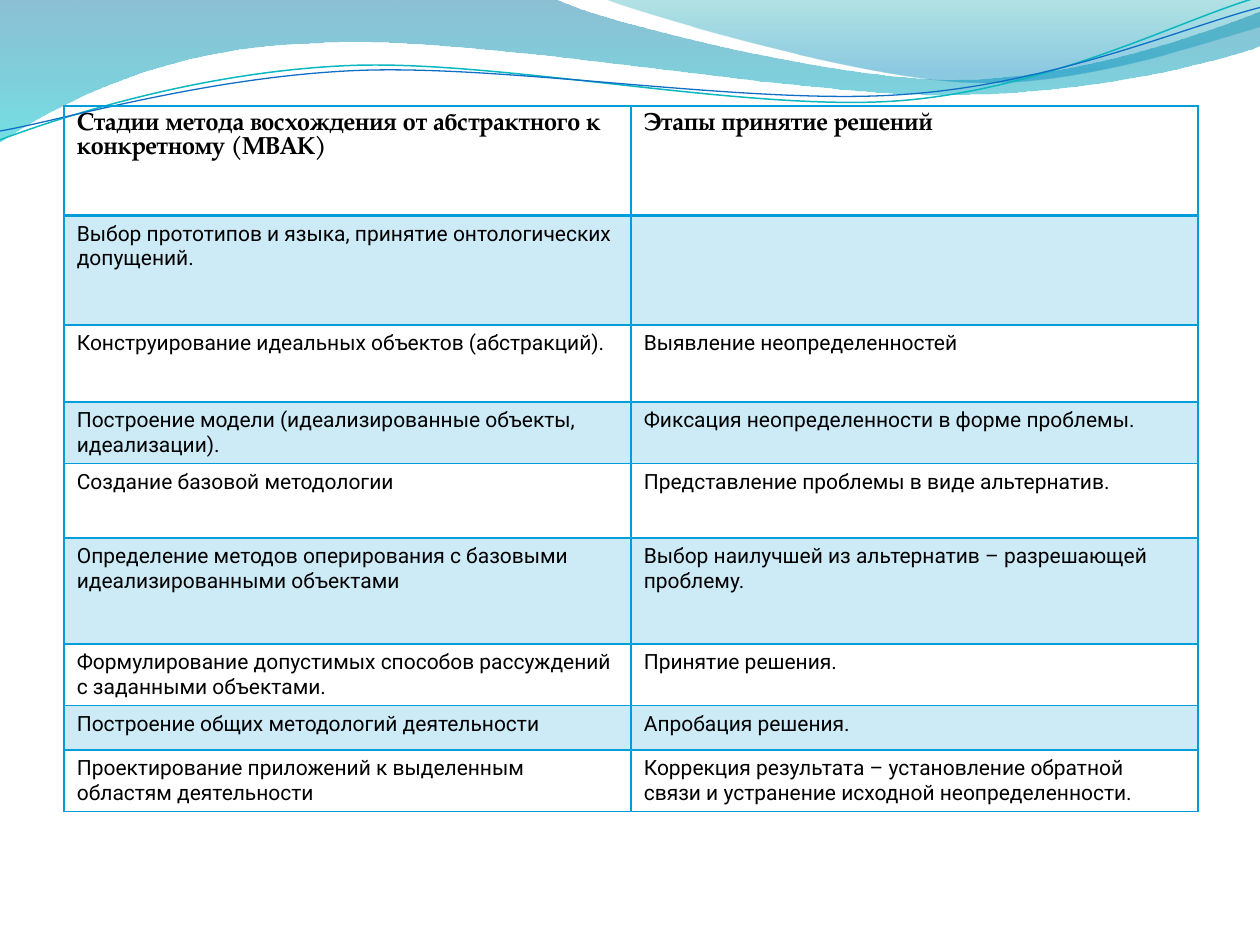
from dataclasses import dataclass
from math import cos, radians, sin
from typing import Optional

from lxml.etree import SubElement
from pptx import Presentation
from pptx.dml.color import RGBColor
from pptx.oxml.ns import qn
from pptx.oxml.xmlchemy import OxmlElement
from pptx.util import Inches, Pt

BLUE = "009DD9"
TILT = 2.7  # degrees, counter-clockwise turn of the thin lines
HEAD = {"name": "TeX Gyre Pagella", "size": Pt(14), "bold": True}
BODY = {"name": "Roboto", "size": Pt(12), "bold": False}


@dataclass
class Stop:
    pos: float
    color: str
    alpha: int


@dataclass
class Wave:
    start: tuple
    steps: list  # two numbers: straight line; six numbers: Bezier curve
    stops: Optional[list] = None
    line: Optional[tuple] = None  # colour, points
    pivot: tuple = (0, 0)  # centre of the turn


WAVES = [
    # Filled bands
    Wave((0, 0),
         [(4.4, -0.01), (4.76, 0.17, 6.64, 0.63, 7.58, 0.63),
          (8.53, 0.63, 9.58, 0.26, 10, 0.09), (10.01, 0.36),
          (9.83, 0.44, 8.7, 0.76, 7.46, 0.75),
          (6.22, 0.75, 3.82, 0.28, 2.57, 0.34),
          (1.29, 0.36, 0.46, 0.83, -0.01, 1.13), (0, 0)],
         stops=[Stop(0, "0074A1", 45), Stop(1, "00C6CF", 55)]),
    Wave((4.79, -0.01),
         [(5.09, 0.11, 6.82, 0.62, 7.69, 0.65),
          (8.56, 0.69, 9.61, 0.32, 10, 0.21), (10, 0), (4.79, -0.01)],
         stops=[Stop(0, "00A1A9", 30), Stop(0.8, "008BBF", 45)]),
    # Thin lines
    Wave((0, 1.11),
         [(0.48, 0.93, 1.58, 0.57, 2.77, 0.52),
          (3.95, 0.47, 5.93, 0.89, 7.13, 0.8),
          (8.33, 0.71, 9.38, 0.15, 9.98, -0.02)],
         line=("0AB8BF", 0.85), pivot=(4.99, 0.58)),
    Wave((0, 1.04),
         [(0.47, 0.96, 1.64, 0.61, 2.83, 0.56),
          (4.03, 0.51, 5.97, 0.84, 7.17, 0.75),
          (8.36, 0.67, 9.41, 0.21, 10, 0.06)],
         line=("0F6FC6", 0.75), pivot=(5, 0.59)),
]

# Row height, left text, right text
ROWS = [
    (0.87, "Стадии метода восхождения от абстрактного к конкретному (МВАК)",
     "Этапы принятие решений"),
    (0.87, "Выбор прототипов и языка, принятие онтологических допущений.", ""),
    (0.61, "Конструирование идеальных объектов (абстракций).",
     "Выявление неопределенностей"),
    (0.47, "Построение модели (идеализированные объекты, идеализации).",
     "Фиксация неопределенности в форме проблемы."),
    (0.59, "Создание базовой методологии",
     "Представление проблемы в виде альтернатив."),
    (0.84, "Определение методов оперирования с базовыми идеализированными объектами",
     "Выбор наилучшей из альтернатив – разрешающей проблему."),
    (0.35, "Формулирование допустимых способов рассуждений с заданными объектами.",
     "Принятие решения."),
    (0.35, "Построение общих методологий деятельности", "Апробация решения."),
    (0.35, "Проектирование приложений к выделенным областям деятельности",
     "Коррекция результата – установление обратной связи и устранение "
     "исходной неопределенности."),
]


def paint(color, code: str) -> None:
    color.rgb = RGBColor.from_string(code)


def fade(node, alpha: int) -> None:
    """Set the opacity, in percent, of a colour element."""
    SubElement(node, qn("a:alpha"), val=str(alpha * 1000))


def level(point: tuple, wave: Wave) -> tuple:
    """Give a point in EMU as it lies before the line is turned."""
    x, y = point
    if wave.line:
        turn = radians(TILT)
        mid, top = wave.pivot
        dx, dy = x - mid, y - top
        x = mid + dx * cos(turn) - dy * sin(turn)
        y = top + dx * sin(turn) + dy * cos(turn)
    return Inches(x), Inches(y)


def bend(shape, steps: list) -> None:
    """Join each three segments that stand for a curve into one Bezier."""
    nodes = iter(list(shape._element.spPr.iter(qn("a:lnTo"))))
    for step in steps:
        group = [next(nodes) for _ in range(len(step) // 2)]
        if len(group) == 3:
            curve = OxmlElement("a:cubicBezTo")
            group[0].addprevious(curve)
            for node in group:
                curve.append(node[0])
                node.getparent().remove(node)


def draw_wave(slide, wave: Wave) -> None:
    points = [step[i:i + 2] for step in wave.steps for i in range(0, len(step), 2)]
    pen = slide.shapes.build_freeform(*level(wave.start, wave), scale=1.0)
    pen.add_line_segments([level(p, wave) for p in points], close=wave.line is None)
    shape = pen.convert_to_shape()
    bend(shape, wave.steps)
    shape.shadow.inherit = False
    if wave.line:
        code, width = wave.line
        shape.rotation = 360 - TILT
        shape.fill.background()
        paint(shape.line.color, code)
        shape.line.width = Pt(width)
        return
    shape.line.fill.background()
    shape.fill.gradient()
    shape.fill.gradient_angle = 270
    for mark, stop in zip(shape.fill.gradient_stops, wave.stops):
        mark.position = stop.pos
        paint(mark.color, stop.color)
    nodes = shape._element.spPr.iter(qn("a:srgbClr"))
    for node, stop in zip(list(nodes), wave.stops):
        fade(node, stop.alpha)


def set_edges(cell, base: float) -> None:
    """Add borders; they must come before the fill in the cell XML."""
    props = cell._tc.get_or_add_tcPr()
    widths = {"lnL": 1, "lnR": 1, "lnT": 1, "lnB": base}
    for tag, width in widths.items():
        edge = SubElement(props, qn("a:" + tag), w=str(Pt(width)))
        fill = SubElement(edge, qn("a:solidFill"))
        SubElement(fill, qn("a:srgbClr"), val=BLUE)


def fill_cell(cell, text: str, row: int) -> None:
    set_edges(cell, 2 if row == 0 else 1)
    if row % 2:
        cell.fill.solid()
        paint(cell.fill.fore_color, BLUE)
        for node in cell._tc.tcPr.findall(qn("a:solidFill") + "/" + qn("a:srgbClr")):
            fade(node, 20)
    else:
        cell.fill.background()
    para = cell.text_frame.paragraphs[0]
    if row == 0:
        para.line_spacing = Pt(14)
    if not text:
        para.font.size = BODY["size"]
        return
    run = para.add_run()
    run.text = text
    for key, value in (BODY if row else HEAD).items():
        setattr(run.font, key, value)
    paint(run.font.color, "000000")


def draw_table(slide) -> None:
    frame = slide.shapes.add_table(len(ROWS), 2, Inches(0.51), Inches(0.84),
                                   Inches(9), Inches(5.82))
    table = frame.table
    table.first_row = table.horz_banding = False
    for r, (height, *texts) in enumerate(ROWS):
        table.rows[r].height = Inches(height)
        for c, text in enumerate(texts):
            fill_cell(table.cell(r, c), text, r)
    frame.height = Inches(5.82)


def main() -> None:
    deck = Presentation()
    deck.slide_width, deck.slide_height = Inches(10), Inches(7.5)
    slide = deck.slides.add_slide(deck.slide_layouts[6])
    for wave in WAVES:
        draw_wave(slide, wave)
    draw_table(slide)
    deck.save("out.pptx")


if __name__ == "__main__":
    main()
